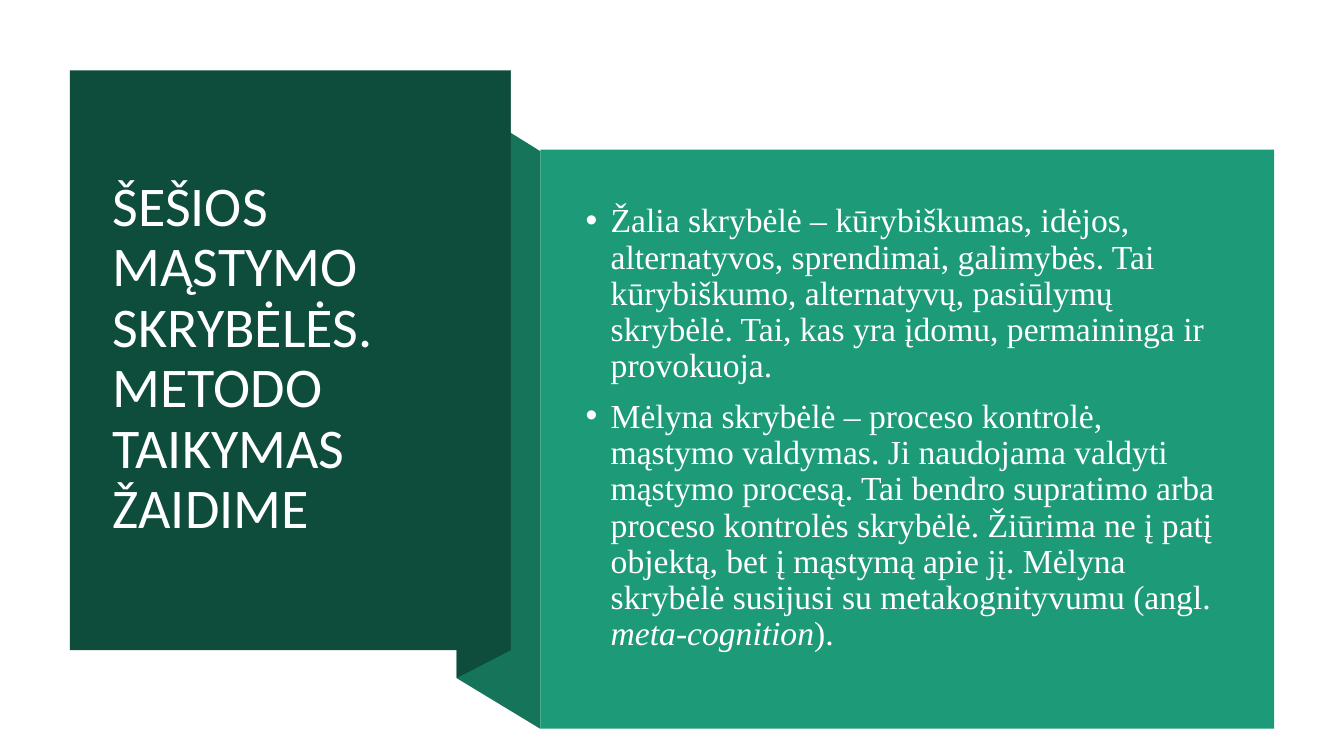
import dataclasses

import lxml.etree
import pptx
import pptx.dml.color
import pptx.enum.shapes
import pptx.enum.text
import pptx.oxml.ns
import pptx.util


@dataclasses.dataclass(frozen=True)
class Theme:
    dark: str = "0E4D3C"
    middle: str = "16745A"
    light: str = "1D9A78"
    white: str = "FFFFFF"
    title_font: str = "Calibri"
    body_font: str = "Times New Roman"
    title_size: int = 40
    body_size: int = 24


THEME = Theme()
WIDE = pptx.util.Inches(13.33)
HIGH = pptx.util.Inches(7.5)

# Shared edges of the folded ribbon, in percent of the slide
FOLD_LEFT, FOLD_RIGHT, PANEL_LEFT = 33.98, 38, 40.2
CARD_TOP, CARD_BASE = 9.3, 86
FOLD_TOP, FOLD_BASE = 13.1, 89.7
PANEL_TOP, PANEL_BASE = 19.8, 96.4

TITLE = "ŠEŠIOS MĄSTYMO SKRYBĖLĖS. METODO TAIKYMAS ŽAIDIME"
GREEN_HAT = (
    "Žalia skrybėlė – kūrybiškumas, idėjos, alternatyvos, sprendimai, galimybės. "
    "Tai kūrybiškumo, alternatyvų, pasiūlymų skrybėlė. "
    "Tai, kas yra įdomu, permaininga ir provokuoja."
)
BLUE_HAT = (
    "Mėlyna skrybėlė – proceso kontrolė, mąstymo valdymas. "
    "Ji naudojama valdyti mąstymo procesą. "
    "Tai bendro supratimo arba proceso kontrolės skrybėlė. "
    "Žiūrima ne į patį objektą, bet į mąstymą apie jį. "
    "Mėlyna skrybėlė susijusi su metakognityvumu (angl. "
)


def place(across, down):
    """Turn percentages of the slide's width and height into lengths."""
    return round(WIDE * across / 100), round(HIGH * down / 100)


def paint(shape, color):
    shape.shadow.inherit = False
    shape.fill.solid()
    shape.fill.fore_color.rgb = pptx.dml.color.RGBColor.from_string(color)
    shape.line.fill.background()


def add_panel(slide, left, top, right, base, color):
    kind = pptx.enum.shapes.MSO_SHAPE.RECTANGLE
    size = place(right - left, base - top)
    paint(slide.shapes.add_shape(kind, *place(left, top), *size), color)


def add_fold(slide, corners, color):
    first, *others = [place(*corner) for corner in corners]
    outline = slide.shapes.build_freeform(*first)
    outline.add_line_segments(others, close=True)
    paint(outline.convert_to_shape(), color)


def add_bullet(para):
    props = para._p.get_or_add_pPr()
    indent = pptx.util.Inches(0.25)
    props.set("marL", str(indent))
    props.set("indent", str(-indent))
    for tag, key, value in (("a:buFont", "typeface", "Arial"), ("a:buChar", "char", "•")):
        mark = lxml.etree.SubElement(props, pptx.oxml.ns.qn(tag))
        mark.set(key, value)


def add_text(slide, left, top, width, height, paras, *, font, size, color,
             before=0, bullet=False):
    """Each paragraph is a list of (text, italic) runs."""
    box = slide.shapes.add_textbox(*place(left, top), *place(width, height))
    frame = box.text_frame
    frame.word_wrap = True
    frame.vertical_anchor = pptx.enum.text.MSO_ANCHOR.MIDDLE
    for index, runs in enumerate(paras):
        para = frame.add_paragraph() if index else frame.paragraphs[0]
        para.line_spacing = 0.9
        para.space_before = pptx.util.Pt(before)
        if bullet:
            add_bullet(para)
        for words, italic in runs:
            run = para.add_run()
            run.text = words
            run.font.name = font
            run.font.size = pptx.util.Pt(size)
            run.font.italic = italic
            run.font.color.rgb = pptx.dml.color.RGBColor.from_string(color)


def main():
    deck = pptx.Presentation()
    deck.slide_width, deck.slide_height = WIDE, HIGH
    slide = deck.slides.add_slide(deck.slide_layouts[6])

    add_fold(slide, [(PANEL_LEFT, PANEL_BASE), (FOLD_LEFT, FOLD_BASE),
                     (FOLD_LEFT, FOLD_TOP), (PANEL_LEFT, 20)], THEME.middle)
    add_fold(slide, [(FOLD_RIGHT, CARD_BASE), (FOLD_LEFT, FOLD_BASE),
                     (FOLD_LEFT, FOLD_TOP), (FOLD_RIGHT, CARD_TOP)], THEME.dark)
    add_panel(slide, 5.2, CARD_TOP, FOLD_RIGHT, CARD_BASE, THEME.dark)
    add_text(slide, 7.65, 14.27, 27.83, 66.53, [[(TITLE, False)]],
             font=THEME.title_font, size=THEME.title_size, color=THEME.white)

    add_panel(slide, PANEL_LEFT, PANEL_TOP, 94.8, PANEL_BASE, THEME.light)
    hats = [[(GREEN_HAT, False)],
            [(BLUE_HAT, False), ("meta-cognition", True), (").", False)]]
    add_text(slide, 42.83, 25.07, 48.84, 63.2, hats, font=THEME.body_font,
             size=THEME.body_size, color=THEME.white, before=10, bullet=True)

    deck.save("out.pptx")


if __name__ == "__main__":
    main()
